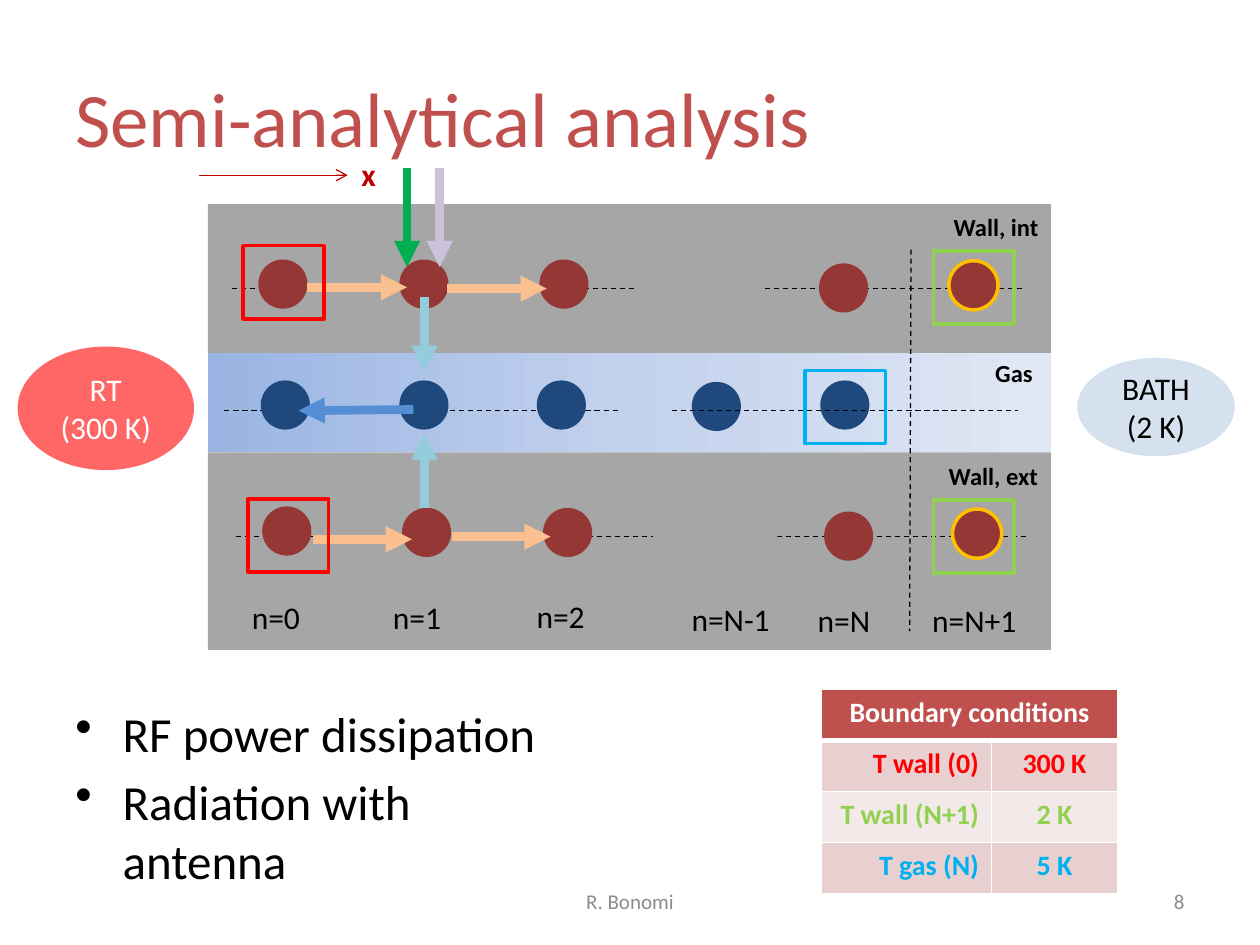
import copy
from typing import NamedTuple

import pptx
import pptx.dml.color
import pptx.enum.dml
import pptx.enum.shapes
import pptx.enum.text
import pptx.oxml.ns
import pptx.util

Pt = pptx.util.Pt
RGB = pptx.dml.color.RGBColor
Kind = pptx.enum.shapes.MSO_SHAPE
Side = pptx.enum.text.PP_ALIGN
Mid = pptx.enum.text.MSO_ANCHOR
Dash = pptx.enum.dml.MSO_LINE
qn = pptx.oxml.ns.qn

BLACK = RGB(0, 0, 0)
WHITE = RGB(255, 255, 255)
BRICK = RGB(0xC0, 0x50, 0x4D)
MUTED = RGB(0x8C, 0x8C, 0x8C)
AXIS = RGB(0xC0, 0, 0)
WALL = RGB(0xA6, 0xA6, 0xA6)
NAVY = RGB(0x1F, 0x49, 0x7D)
RUST = RGB(0x95, 0x37, 0x35)
GOLD = RGB(0xFF, 0xC0, 0)
RED = RGB(0xFF, 0, 0)
LIME = RGB(0x92, 0xD0, 0x50)
CYAN = RGB(0, 0xB0, 0xF0)
PEACH = RGB(0xFA, 0xC0, 0x90)
TEAL = RGB(0x93, 0xCD, 0xDD)
LILAC = RGB(0xCC, 0xC1, 0xDA)
GREEN = RGB(0, 0xB0, 0x50)
BLUE = RGB(0x55, 0x8E, 0xD5)
MIST = RGB(0xB9, 0xCD, 0xE5)
ROSE = RGB(0xE8, 0xD0, 0xD0)
BLUSH = RGB(0xF4, 0xE9, 0xE9)
COOL = (RGB(0x9A, 0xB5, 0xE4), RGB(0xC2, 0xD1, 0xED), RGB(0xE1, 0xE8, 0xF5))


class Box(NamedTuple):
    x: float
    y: float
    w: float
    h: float


class Line(NamedTuple):
    x: float
    y: float
    to_x: float
    to_y: float
    color: RGB = BLACK
    width: float = 0.75
    head: str = ""


class Dot(NamedTuple):
    x: float
    y: float
    color: RGB
    ring: RGB | None = None


class Label(NamedTuple):
    box: Box
    text: str
    size: float = 18
    color: RGB = BLACK
    bold: bool = False


class Row(NamedTuple):
    name: str
    value: str
    color: RGB
    fill: RGB


def write(frame, text: str, *, size: float, color: RGB = BLACK, bold: bool = False,
          align: Side = Side.LEFT, anchor: Mid = Mid.TOP, wrap: bool = True,
          bullet: str = "") -> None:
    frame.word_wrap = wrap
    frame.vertical_anchor = anchor
    for i, line in enumerate(text.split("\n")):
        para = frame.add_paragraph() if i else frame.paragraphs[0]
        para.alignment = align
        run = para.add_run()
        run.text = line
        font = run.font
        font.name, font.size, font.bold = "Calibri", Pt(size), bold
        font.color.rgb = color
        if bullet:
            para.space_before = Pt(size * 0.2)
            prop = para._p.get_or_add_pPr()
            prop.set("marL", str(Pt(27)))
            prop.set("indent", str(Pt(-27)))
            mark(prop, "a:buChar", char=bullet)


def mark(parent, tag: str, **attrs: str):
    node = parent.makeelement(qn(tag), attrs)
    parent.append(node)
    return node


def place(box: Box) -> list:
    return [Pt(v) for v in box]


def note(slide, box: Box, text: str, **style) -> None:
    write(slide.shapes.add_textbox(*place(box)).text_frame, text, **style)


def shape(slide, box: Box, kind: Kind = Kind.RECTANGLE, fill: RGB | None = None,
          edge: RGB | None = None):
    item = slide.shapes.add_shape(kind, *place(box))
    item.shadow.inherit = False
    if fill is None:
        item.fill.background()
    else:
        item.fill.solid()
        item.fill.fore_color.rgb = fill
    if edge is None:
        item.line.fill.background()
    else:
        item.line.color.rgb = edge
        item.line.width = Pt(2)
    return item


def link(slide, line: Line) -> None:
    ends = [Pt(v) for v in line[:4]]
    item = slide.shapes.add_connector(pptx.enum.shapes.MSO_CONNECTOR.STRAIGHT, *ends)
    item.line.color.rgb = line.color
    item.line.width = Pt(line.width)
    if line.head:
        mark(item.line._get_or_add_ln(), "a:tailEnd", type=line.head)
    else:
        item.line.dash_style = Dash.DASH
    mark(item._element.spPr, "a:effectLst")


def blend(item, colors: tuple) -> None:
    item.fill.gradient()
    item.fill.gradient_angle = 0
    stops = item._element.spPr.find(".//" + qn("a:gsLst"))
    stops.insert(1, copy.deepcopy(stops[0]))
    for i, (stop, color) in enumerate(zip(item.fill.gradient_stops, colors)):
        stop.position = i / 2
        stop.color.rgb = color


def tank(slide, box: Box, text: str, fill: RGB, color: RGB) -> None:
    item = shape(slide, box, Kind.OVAL, fill)
    tint = item._element.spPr.find(qn("a:solidFill"))[0]
    mark(tint, "a:alpha", val="60000")
    write(item.text_frame, text, size=18, color=color, align=Side.CENTER, anchor=Mid.MIDDLE)


def edges(cell, base: float) -> None:
    prop = cell._tc.get_or_add_tcPr()
    fill = prop[0]
    for tag, width in (("a:lnL", 1), ("a:lnR", 1), ("a:lnT", 1), ("a:lnB", base)):
        line = prop.makeelement(qn(tag), {"w": str(Pt(width))})
        fill.addprevious(line)
        mark(mark(line, "a:solidFill"), "a:srgbClr", val=str(WHITE))


def paint(cell, text: str, fill: RGB, color: RGB, align: Side, base: float = 1) -> None:
    cell.fill.solid()
    cell.fill.fore_color.rgb = fill
    edges(cell, base)
    write(cell.text_frame, text, size=16, color=color, bold=True, align=align)


def limits(slide, rows: list[Row]) -> None:
    box = Box(469.4, 393.8, 169.2, 116.8)
    grid = slide.shapes.add_table(len(rows) + 1, 2, *place(box)).table
    for col, width in zip(grid.columns, (97.2, 72)):
        col.width = Pt(width)
    for i in range(2):
        paint(grid.cell(0, i), "" if i else "Boundary conditions", BRICK, WHITE, Side.CENTER, 3)
    grid.cell(0, 0).merge(grid.cell(0, 1))
    for i, row in enumerate(rows, 1):
        paint(grid.cell(i, 0), row.name, row.fill, row.color, Side.RIGHT)
        paint(grid.cell(i, 1), row.value, row.fill, row.color, Side.CENTER)


LABELS = [
    Label(Box(199.4, 85, 23, 28.8), "x", 18, AXIS, True),
    Label(Box(136.8, 338.4, 42.5, 28.8), "n=0"),
    Label(Box(217.4, 338.4, 42.5, 28.8), "n=1"),
    Label(Box(299.5, 337.7, 42.5, 28.8), "n=2"),
    Label(Box(388.1, 339.1, 59.8, 28.8), "n=N-1"),
    Label(Box(460.1, 339.8, 44.6, 28.8), "n=N"),
    Label(Box(525.6, 339.8, 63.4, 28.8), "n=N+1"),
    Label(Box(537.8, 117.4, 63.4, 24.5), "Wall, int", 14, bold=True),
    Label(Box(561.6, 200.9, 36, 24.5), "Gas", 14, bold=True),
    Label(Box(535, 259.9, 66.2, 24.5), "Wall, ext", 14, bold=True),
]
RULES = [
    Line(132.5, 164.9, 586, 164.9),
    Line(128.2, 234.7, 355, 234.7),
    Line(134.6, 306.7, 588.2, 306.7),
    Line(520.6, 142.6, 519.8, 360.7),
]
GAPS = [Box(364.3, 144, 71.3, 42.5), Box(373, 290.9, 71.3, 42.5)]
DOTS = [
    *(Dot(x, 217.4, NAVY) for x in (149, 228.2, 306.7, 468.7)),
    Dot(395.3, 218.2, NAVY),
    *(Dot(x, 148.3, RUST) for x in (147.6, 228.2, 308.2)),
    Dot(468, 150.5, RUST),
    Dot(542.2, 149, RUST, GOLD),
    Dot(149.8, 289.4, RUST),
    *(Dot(x, 290.2, RUST) for x in (229.7, 310.3)),
    Dot(470.9, 292.3, RUST),
    Dot(544.3, 290.9, RUST, GOLD),
]
FLOWS = [
    Line(251.3, 95.8, 251.3, 152.6, LILAC),
    Line(242.6, 290.2, 242.6, 247.7, TEAL),
    Line(175.7, 164.2, 232.6, 164.2, PEACH),
    Line(255.6, 164.9, 312.5, 164.9, PEACH),
    Line(232.6, 95.8, 232.6, 152.6, GREEN),
    Line(236.2, 234, 170.6, 234.7, BLUE),
    Line(178.6, 308.2, 235.4, 308.2, PEACH),
    Line(258.5, 306.7, 314.6, 306.7, PEACH),
    Line(242.6, 169.9, 242.6, 212.4, TEAL),
]
FRAMES = [(460.1, 211.7, CYAN), (533.5, 143.3, LIME), (533.5, 285.8, LIME),
          (141.8, 285.1, RED), (139, 140.4, RED)]
ROWS = [
    Row("T wall (0)", "300 K", RED, ROSE),
    Row("T wall (N+1)", "2 K", LIME, BLUSH),
    Row("T gas (N)", "5 K", CYAN, ROSE),
]


def main() -> None:
    deck = pptx.Presentation()
    deck.slide_width, deck.slide_height = Pt(720), Pt(540)
    slide = deck.slides.add_slide(deck.slide_layouts[6])
    note(slide, Box(36, 21.6, 648, 90), "Semi-analytical analysis", size=44, color=BRICK,
         anchor=Mid.MIDDLE)
    foot = {"size": 12, "color": MUTED, "anchor": Mid.MIDDLE}
    note(slide, Box(246, 500.4, 228, 28.8), "R. Bonomi", align=Side.CENTER, **foot)
    note(slide, Box(516, 500.4, 168, 28.8), "8", align=Side.RIGHT, **foot)
    limits(slide, ROWS)
    link(slide, Line(113.8, 100.1, 198.7, 100.1, AXIS, head="arrow"))
    shape(slide, Box(118.8, 116.6, 481.7, 85), fill=WALL)
    shape(slide, Box(118.8, 258.5, 481.7, 113), fill=WALL)
    blend(shape(slide, Box(118.8, 201.6, 481.7, 56.9)), COOL)
    for tag in LABELS:
        note(slide, tag.box, tag.text, size=tag.size, color=tag.color, bold=tag.bold, wrap=False)
    for rule in RULES:
        link(slide, rule)
    for gap in GAPS:
        shape(slide, gap, fill=WALL)
    for dot in DOTS:
        shape(slide, Box(dot.x, dot.y, 28.1, 28.1), Kind.OVAL, dot.color, dot.ring)
    for flow in FLOWS:
        link(slide, flow._replace(width=5, head="triangle"))
    for x, y, color in FRAMES:
        shape(slide, Box(x, y, 46.1, 41.8), edge=color)
    link(slide, Line(383.8, 234.7, 581.8, 234.7))
    tank(slide, Box(10.1, 198, 100.8, 70.6), "RT\n(300 K)", RED, WHITE)
    tank(slide, Box(615.6, 204.5, 90, 56.2), "BATH\n(2 K)", MIST, BLACK)
    note(slide, Box(36, 398.2, 305.3, 122.4), "RF power dissipation\nRadiation with antenna",
         size=28, bullet="•")
    deck.save("out.pptx")


if __name__ == "__main__":
    main()
